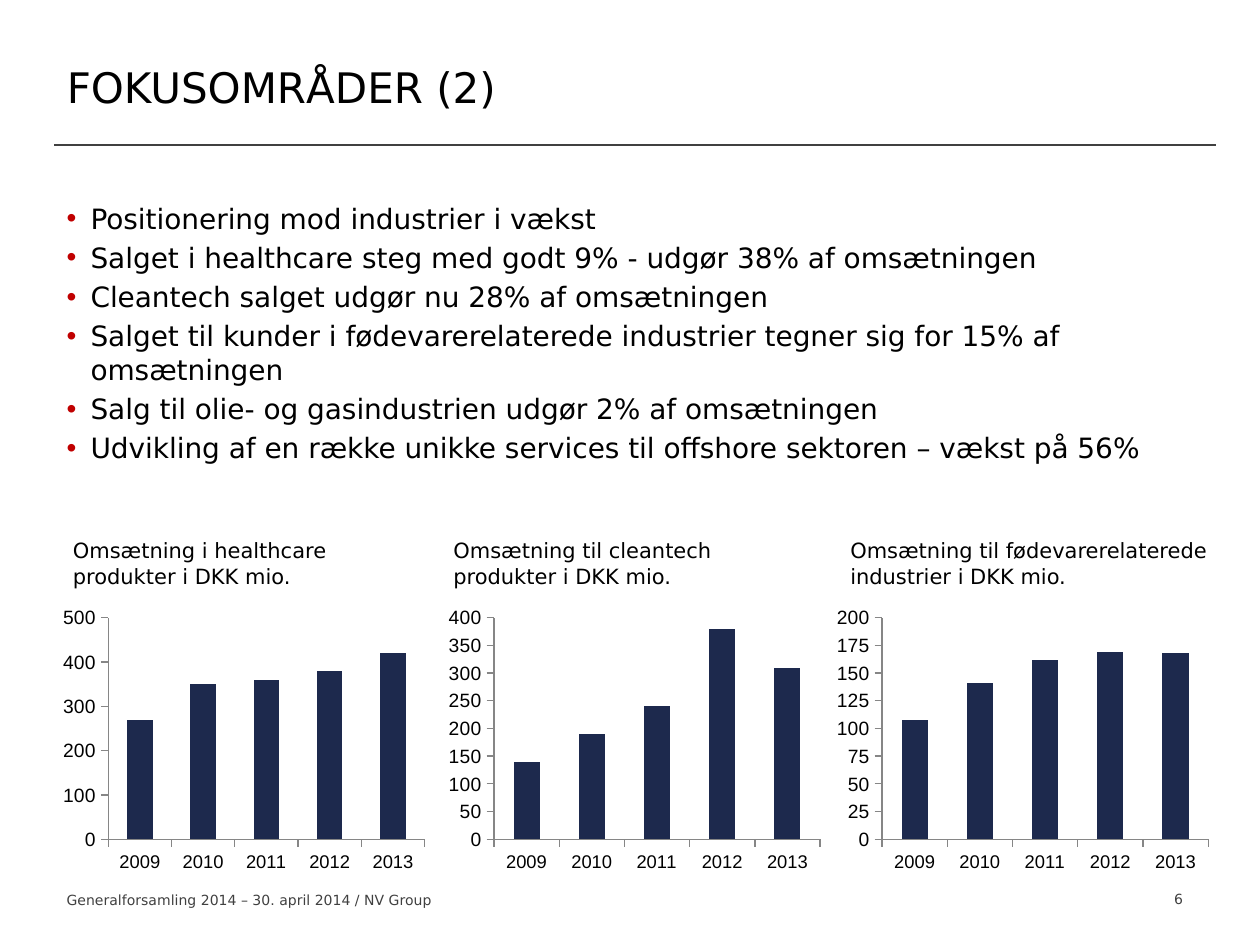
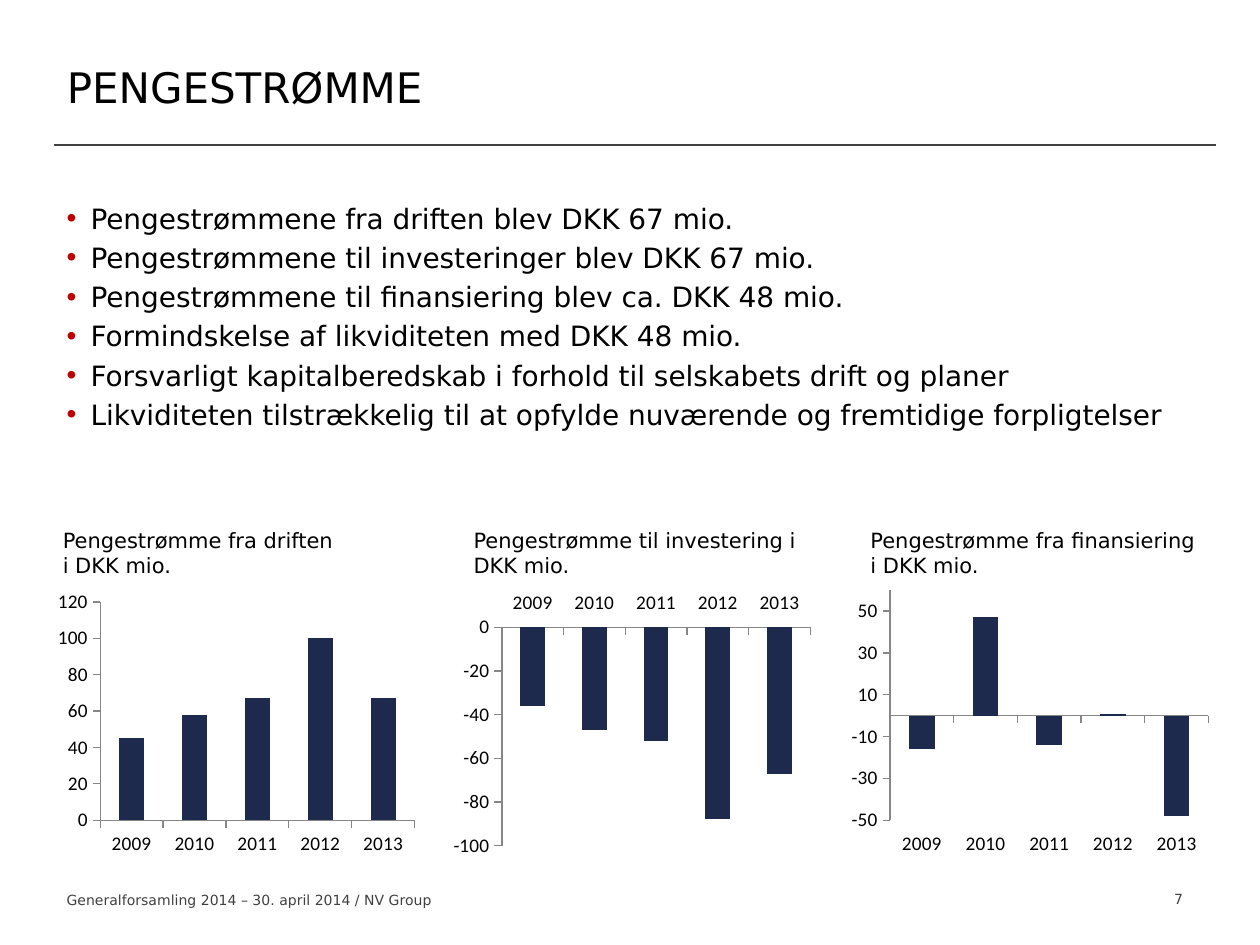
from dataclasses import dataclass
from typing import Any

from lxml.etree import SubElement as Sub
from pptx import Presentation
from pptx.chart.data import CategoryChartData as ChartData
from pptx.dml.color import RGBColor
from pptx.enum.chart import XL_CHART_TYPE as Kind, XL_TICK_LABEL_POSITION as Labels
from pptx.enum.shapes import MSO_CONNECTOR as Link
from pptx.enum.text import MSO_ANCHOR as Anchor, MSO_AUTO_SIZE as Fit, PP_ALIGN as Align
from pptx.oxml.ns import qn
from pptx.util import Inches, Pt

BLACK = RGBColor(0x00, 0x00, 0x00)
GREY = RGBColor(0x40, 0x40, 0x40)
AXIS = RGBColor(0x86, 0x86, 0x86)
NAVY = RGBColor(0x1D, 0x29, 0x4D)
RED = RGBColor(0xC0, 0x00, 0x00)

FACE = "DejaVu Sans"
TITLE = {"name": FACE, "size": Pt(24), "bold": False}
BODY = {"name": FACE, "size": Pt(16)}
LABEL = {"name": FACE, "size": Pt(12)}
SMALL = {"name": FACE, "size": Pt(8)}
FRAME = {"word_wrap": True, "auto_size": Fit.NONE}

LEFT, RIGHT = 0.43, 9.65
INDENT = Inches(0.19)
FOOTER = "Generalforsamling 2014 – 30. april 2014 / NV Group"
YEARS = ["2009", "2010", "2011", "2012", "2013"]

Box = tuple[float, float, float, float]


@dataclass
class Graph:
    label: str
    spot: Box
    box: Box
    vals: list[int]
    low: int
    high: int
    step: int
    years: Labels = Labels.NEXT_TO_AXIS


@dataclass
class Page:
    number: int
    title: str
    points: list[str]
    graphs: list[Graph]
    cat_font: dict[str, Any]
    val_font: dict[str, Any]


def assign(item: Any, values: dict[str, Any]) -> None:
    for key, value in values.items():
        setattr(item, key, value)


def style(font: Any, values: dict[str, Any], color: RGBColor = BLACK) -> None:
    assign(font, values)
    font.color.rgb = color


def place(box: Box) -> list[int]:
    return [Inches(n) for n in box]


def add_text(slide: Any, box: Box, lines: list[str], font: dict[str, Any],
             color: RGBColor = BLACK, align: Align = Align.LEFT,
             bullets: bool = False) -> None:
    frame = slide.shapes.add_textbox(*place(box)).text_frame
    assign(frame, FRAME)
    for i, line in enumerate(lines):
        para = frame.add_paragraph() if i else frame.paragraphs[0]
        if bullets:
            add_bullet(para)
        if i:
            para.space_before = Pt(3.2)
        para.alignment = align
        run = para.add_run()
        run.text = line
        style(run.font, font, color)


def add_bullet(para: Any) -> None:
    props = para._p.get_or_add_pPr()
    props.set("marL", str(INDENT))
    props.set("indent", str(-INDENT))
    tint = Sub(props, qn("a:buClr"))
    Sub(tint, qn("a:srgbClr")).set("val", str(RED))
    Sub(props, qn("a:buFont")).set("typeface", "Arial")
    Sub(props, qn("a:buChar")).set("char", "•")


def add_title(slide: Any, text: str) -> None:
    title = slide.shapes.title
    spots = place((LEFT, 0.22, 8.58, 0.93))
    assign(title, dict(zip(("left", "top", "width", "height"), spots)))
    frame = title.text_frame
    assign(frame, FRAME | {"text": text, "vertical_anchor": Anchor.MIDDLE})
    para = frame.paragraphs[0]
    para.alignment = Align.LEFT
    style(para.runs[0].font, TITLE)


def add_rule(slide: Any) -> None:
    ends = place((LEFT, 1.15, RIGHT, 1.15))
    rule = slide.shapes.add_connector(Link.STRAIGHT, *ends)
    rule.line.color.rgb = GREY
    rule.line.width = Pt(1.25)
    Sub(rule._element.spPr, qn("a:effectLst"))


def add_graph(slide: Any, graph: Graph, page: Page) -> None:
    add_text(slide, graph.spot, [graph.label], LABEL)
    data = ChartData()
    data.categories = YEARS
    data.add_series("Series 1", graph.vals)
    chart = slide.shapes.add_chart(Kind.COLUMN_CLUSTERED, *place(graph.box), data).chart
    assign(chart, {"has_legend": False, "has_title": False})
    style(chart.font, {"name": "Calibri", "size": Pt(18)})

    plot = chart.plots[0]
    assign(plot, {"gap_width": 150, "vary_by_categories": False})
    bars = plot.series[0]
    bars.invert_if_negative = False
    bars.format.fill.solid()
    bars.format.fill.fore_color.rgb = NAVY

    cats, vals = chart.category_axis, chart.value_axis
    for axis, font in ((cats, page.cat_font), (vals, page.val_font)):
        axis.has_major_gridlines = False
        axis.format.line.color.rgb = AXIS
        axis.format.line.width = Pt(0.75)
        style(axis.tick_labels.font, font)
    assign(vals, {"minimum_scale": graph.low, "maximum_scale": graph.high,
                  "major_unit": graph.step})
    cats.tick_label_position = graph.years


def add_page(deck: Any, page: Page) -> None:
    slide = deck.slides.add_slide(deck.slide_layouts[5])
    add_rule(slide)
    add_text(slide, (8.94, 7.02, 0.83, 0.23), [str(page.number)], SMALL, GREY, Align.CENTER)
    add_text(slide, (LEFT, 7.03, 4.02, 0.24), [FOOTER], SMALL, GREY)
    add_title(slide, page.title)
    add_text(slide, (LEFT, 1.55, 9.21, 2.44), page.points, BODY, bullets=True)
    for graph in page.graphs:
        add_graph(slide, graph, page)


PAGES = [
    Page(
        6, "FOKUSOMRÅDER (2)",
        ["Positionering mod industrier i vækst",
         "Salget i healthcare steg med godt 9% - udgør 38% af omsætningen",
         "Cleantech salget udgør nu 28% af omsætningen",
         "Salget til kunder i fødevarerelaterede industrier tegner sig for 15% af omsætningen",
         "Salg til olie- og gasindustrien udgør 2% af omsætningen",
         "Udvikling af en række unikke services til offshore sektoren – vækst på 56%"],
        [Graph("Omsætning i healthcare produkter i DKK mio.",
               (0.48, 4.22, 2.91, 0.55), (0.44, 4.77, 2.99, 2.2),
               [270, 350, 360, 380, 420], 0, 500, 100),
         Graph("Omsætning til cleantech produkter i DKK mio.",
               (3.5, 4.22, 3.07, 0.55), (3.5, 4.77, 3.07, 2.2),
               [140, 190, 240, 380, 310], 0, 400, 50),
         Graph("Omsætning til fødevarerelaterede industrier i DKK mio.",
               (6.65, 4.22, 3.15, 0.55), (6.58, 4.77, 3.07, 2.2),
               [108, 141, 162, 169, 168], 0, 200, 25)],
        {"name": "Arial", "size": Pt(10.5)}, {"name": "Arial", "size": Pt(11)}),
    Page(
        7, "PENGESTRØMME",
        ["Pengestrømmene fra driften blev DKK 67 mio.",
         "Pengestrømmene til investeringer blev DKK 67 mio.",
         "Pengestrømmene til finansiering blev ca. DKK 48 mio.",
         "Formindskelse af likviditeten med DKK 48 mio.",
         "Forsvarligt kapitalberedskab i forhold til selskabets drift og planer",
         "Likviditeten tilstrækkelig til at opfylde nuværende og fremtidige forpligtelser"],
        [Graph("Pengestrømme fra driften i DKK mio.",
               (0.4, 4.14, 2.4, 0.47), (0.4, 4.64, 2.95, 2.2),
               [45, 58, 67, 100, 67], 0, 120, 20),
         Graph("Pengestrømme til investering i DKK mio.",
               (3.66, 4.14, 2.79, 0.47), (3.54, 4.65, 2.95, 2.2),
               [-36, -47, -52, -88, -67], -100, 0, 20, Labels.HIGH),
         Graph("Pengestrømme fra finansiering i DKK mio.",
               (6.81, 4.14, 2.79, 0.47), (6.7, 4.64, 2.95, 2.2),
               [-16, 47, -14, 1, -48], -50, 60, 20, Labels.LOW)],
        {"name": "Calibri", "size": Pt(11)}, {"name": "Calibri", "size": Pt(11)}),
]


def main() -> None:
    deck = Presentation()
    deck.slide_width, deck.slide_height = Inches(10), Inches(7.5)
    for page in PAGES:
        add_page(deck, page)
    deck.save("out.pptx")


if __name__ == "__main__":
    main()
